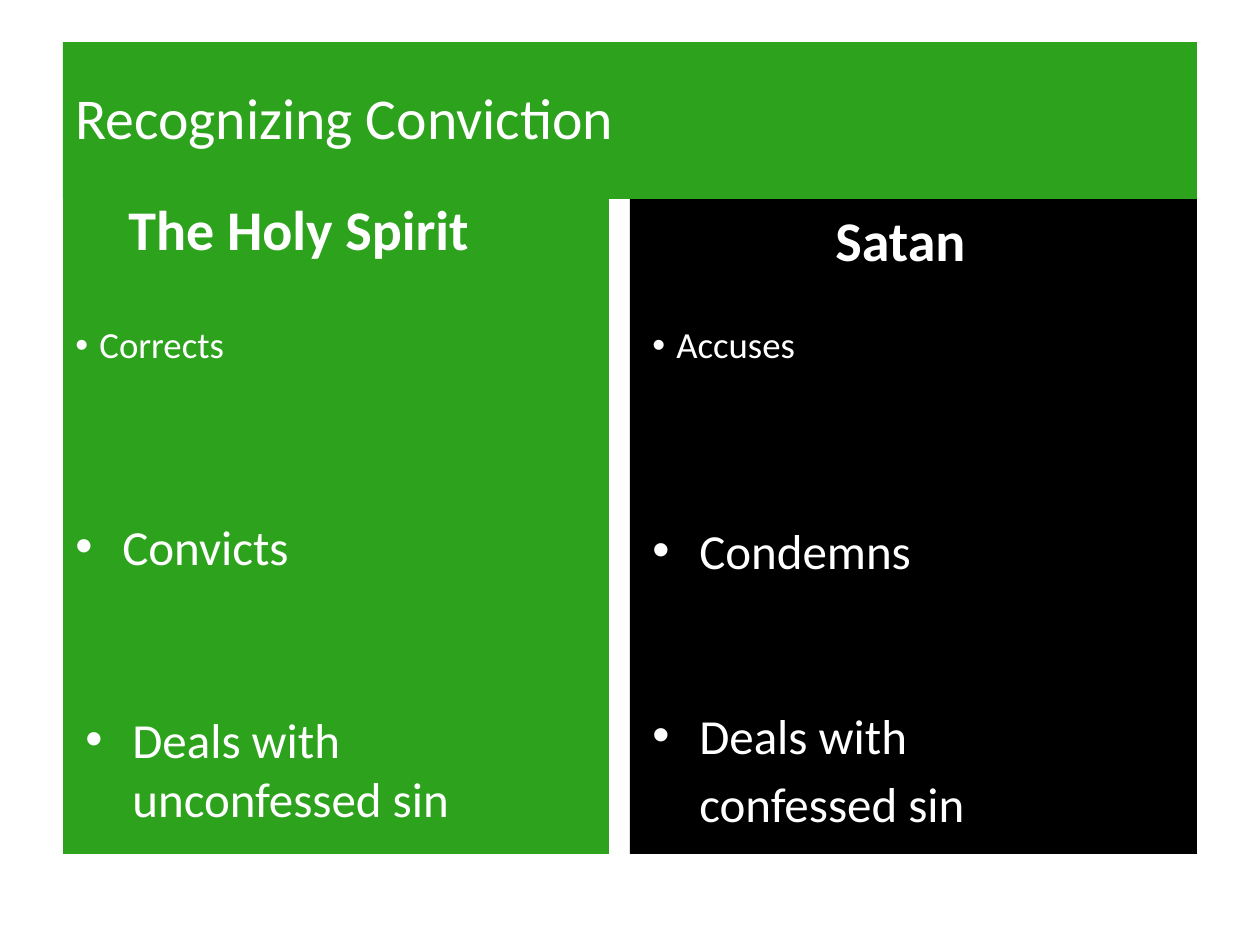
from lxml import etree
from pptx import Presentation
from pptx.dml.color import RGBColor
from pptx.enum.shapes import MSO_SHAPE
from pptx.enum.text import MSO_ANCHOR, PP_ALIGN
from pptx.oxml.ns import qn
from pptx.util import Pt

RECT = MSO_SHAPE.RECTANGLE
TOP = MSO_ANCHOR.TOP
MIDDLE = MSO_ANCHOR.MIDDLE
LEFT = PP_ALIGN.LEFT
FONT = "Calibri"
SCALE = 914400 / 126
HEX = {"green": "2DA31D", "black": "000000", "white": "FFFFFF"}


def emu(px):
    return round(px * SCALE)


def block(box, fill, lines=(), size=28, bold=False, hang=0, space=None,
          anchor=TOP, wrap=True):
    shape = slide.shapes.add_shape(RECT, *map(emu, box))
    shape.shadow.inherit = False
    shape.fill.solid()
    shape.fill.fore_color.rgb = RGBColor.from_string(HEX[fill])
    shape.line.fill.background()
    frame = shape.text_frame
    frame.word_wrap = wrap
    frame.vertical_anchor = anchor
    for i, line in enumerate(lines):
        para = frame.add_paragraph() if i else frame.paragraphs[0]
        para.alignment = LEFT
        if hang:
            props = para._p.get_or_add_pPr()
            props.set("marL", str(emu(hang)))
            props.set("indent", str(0 if i else -emu(hang)))
            if not i:
                etree.SubElement(props, qn("a:buFont")).set("typeface", "Arial")
                etree.SubElement(props, qn("a:buChar")).set("char", "•")
        if space:
            para.line_spacing = space
        if i:
            para.space_before = Pt(5.6)
        run = para.add_run()
        run.text = line
        run.font.name = FONT
        run.font.size = Pt(size)
        run.font.bold = bold
        run.font.color.rgb = RGBColor.from_string(HEX["white"])


deck = Presentation()
deck.slide_width, deck.slide_height = emu(1260), emu(945)
slide = deck.slides.add_slide(deck.slide_layouts[6])

block((630, 199, 567, 655), "black")
block((63, 199, 546, 655), "green")
block((63, 42, 1134, 157), "green", ["Recognizing Conviction"], 33,
      space=0.9, anchor=MIDDLE)

for box, fill, text in [
    ((63, 321, 483, 78), "green", "Corrects"),
    ((640, 321, 557, 78), "black", "Accuses"),
]:
    block(box, fill, [text], 21, hang=24, space=0.9)

for box, fill, text in [
    ((116, 188, 382, 81), "green", "The Holy Spirit"),
    ((823, 199, 178, 79), "black", "Satan"),
]:
    block(box, fill, [text], 32, bold=True, wrap=False)

for box, fill, lines in [
    ((63, 510, 483, 78), "green", ["Convicts"]),
    ((73, 703, 473, 151), "green", ["Deals with unconfessed sin"]),
    ((640, 514, 557, 73), "black", ["Condemns"]),
    ((640, 699, 557, 151), "black", ["Deals with", "confessed sin"]),
]:
    block(box, fill, lines, hang=47)

deck.save("out.pptx")
